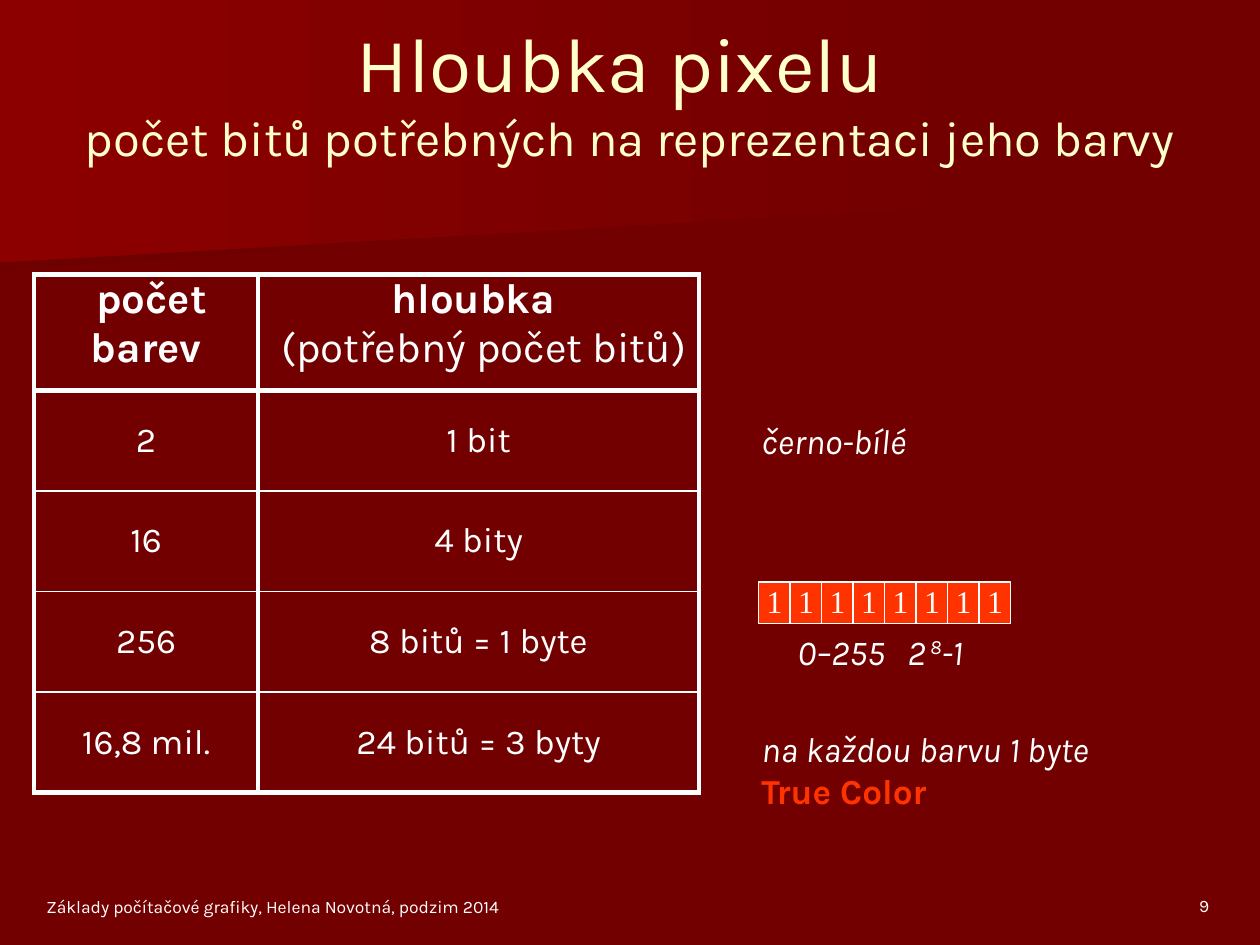
from pptx import Presentation
from pptx.dml.color import RGBColor
from pptx.enum.shapes import MSO_SHAPE as Preset
from pptx.enum.text import MSO_ANCHOR as Anchor, PP_ALIGN as Align
from pptx.oxml.ns import qn
from pptx.util import Pt
from lxml.etree import SubElement

COLORS = {"ground": "720000", "glow": "8C0000", "shade": "6F0000", "title": "FFFFCC",
          "white": "FFFFFF", "accent": "FF3300"}
WIDE = (7.2, 3.6, 7.2, 3.6)
NONE = (0, 0, 0, 0)
BODY = {"name": "Karla", "size": Pt(20)}
ITALIC = {**BODY, "italic": True}


class SlideBuilder:
    """Draws styled elements on one slide, with all lengths in points."""

    def __init__(self, slide, colors):
        self.slide, self.colors = slide, colors
        self.ground(slide.background.fill)

    def rgb(self, key):
        return RGBColor.from_string(self.colors[key])

    def ground(self, fill):
        fill.solid()
        fill.fore_color.rgb = self.rgb("ground")

    def add_runs(self, paragraph, runs, align):
        paragraph.alignment = align
        for text, style, color in runs:
            for number, line in enumerate(text.split("\n")):
                if number:
                    paragraph.add_line_break()
                if not line:
                    continue
                run = paragraph.add_run()
                run.text = line
                run.font.color.rgb = self.rgb(color)
                for key, value in style.items():
                    if key == "baseline":
                        run._r.get_or_add_rPr().set(key, value)
                    else:
                        setattr(run.font, key, value)

    def text(self, box, runs, align=Align.LEFT, anchor=Anchor.TOP, insets=WIDE):
        frame = self.slide.shapes.add_textbox(*map(Pt, box)).text_frame
        left, top, right, bottom = map(Pt, insets)
        layout = {"word_wrap": True, "vertical_anchor": anchor, "margin_left": left,
                  "margin_top": top, "margin_right": right, "margin_bottom": bottom}
        for key, value in layout.items():
            setattr(frame, key, value)
        self.add_runs(frame.paragraphs[0], runs, align)

    def rectangle(self, box, fill, line):
        rectangle = self.slide.shapes.add_shape(Preset.RECTANGLE, *map(Pt, box))
        rectangle.shadow.inherit = False
        rectangle.fill.solid()
        rectangle.fill.fore_color.rgb = self.rgb(fill)
        rectangle.line.color.rgb = self.rgb(line)
        rectangle.line.width = Pt(0.75)

    def band(self, points, start, end):
        corners = [(Pt(x), Pt(y)) for x, y in points]
        outline = self.slide.shapes.build_freeform(*corners[0], scale=1.0)
        outline.add_line_segments(corners[1:], close=True)
        band = outline.convert_to_shape()
        band.shadow.inherit = False
        band.line.fill.background()
        band.fill.gradient()
        band.fill.gradient_angle = 0
        for stop, color in zip(band.fill.gradient_stops, (start, end)):
            stop.color.rgb = self.rgb(color)

    def border(self, cell, side, width):
        line = SubElement(cell._tc.get_or_add_tcPr(), qn(f"a:ln{side}"), w=str(Pt(width)))
        SubElement(SubElement(line, qn("a:solidFill")), qn("a:srgbClr"),
                   val=self.colors["white"])

    def table(self, left, top, widths, heights, rows):
        box = map(Pt, (left, top, sum(widths), sum(heights)))
        table = self.slide.shapes.add_table(len(rows), len(widths), *box).table
        table.first_row = table.horz_banding = False
        for column, width in zip(table.columns, widths):
            column.width = Pt(width)
        last = len(rows) - 1
        for r, (height, contents) in enumerate(zip(heights, rows)):
            table.rows[r].height = Pt(height)
            for c, runs in enumerate(contents):
                cell = table.cell(r, c)
                for side in ("left", "top", "right", "bottom"):
                    setattr(cell, f"margin_{side}", 0)
                cell.vertical_anchor = Anchor.MIDDLE if r else Anchor.TOP
                thick = {"L": True, "R": True, "T": r <= 1, "B": r in (0, last)}
                for side, heavy in thick.items():
                    self.border(cell, side, 3 if heavy else 1)
                cell.fill.background()
                self.add_runs(cell.text_frame.paragraphs[0], runs, Align.CENTER)


def main():
    deck = Presentation()
    deck.slide_width, deck.slide_height = Pt(720), Pt(540)
    page = SlideBuilder(deck.slides.add_slide(deck.slide_layouts[6]), COLORS)

    page.band([(560, 110), (0, 156), (0, 73), (561, 73), (560, 92)], "shade", "ground")
    page.band([(570, 116.5), (0, 150), (0, 0), (570, 0)], "glow", "ground")

    small = {**BODY, "size": Pt(10)}
    page.text((19.5, 502.5, 454.5, 25),
              [("Základy počítačové grafiky, Helena Novotná, podzim 2014", small, "white")],
              anchor=Anchor.BOTTOM)
    page.text((530, 502.5, 168, 24.5), [("9", small, "white")], Align.RIGHT, Anchor.BOTTOM)
    page.text((19.5, 21.5, 680.5, 61),
              [("Hloubka pixelu \n", {**BODY, "size": Pt(44)}, "title"),
               ("počet bitů potřebných na reprezentaci jeho barvy",
                {**BODY, "size": Pt(28)}, "title")], Align.CENTER, Anchor.MIDDLE)

    byte_left, byte_top, bit_width, bits = 433.5, 332.5, 18, "11111111"
    byte_right = byte_left + bit_width * len(bits)
    bit_lefts = [byte_left + bit_width * i for i in range(len(bits))]
    for left in bit_lefts:
        page.rectangle((left, byte_top, min(30, byte_right - left), 24), "accent", "white")
    digit = {"name": "Times New Roman", "size": Pt(18)}
    for left, bit in zip(bit_lefts, bits):
        page.text((left, byte_top, bit_width, 21.5), [(bit, digit, "white")],
                  Align.CENTER, insets=NONE)

    notes_left = 428
    page.text((notes_left, 356.5, 150, 31),
              [("0–255   2", ITALIC, "white"),
               (" 8", {**ITALIC, "baseline": "30000"}, "white"),
               ("-1", ITALIC, "white")], Align.CENTER)
    page.text((notes_left, 412, 232.5, 55.5),
              [("na každou barvu 1 byte\n", ITALIC, "white"),
               ("True Color", {**BODY, "bold": True}, "accent")])
    page.text((notes_left, 236, 198, 31), [("černo-bílé", ITALIC, "white")])

    heading = {**BODY, "size": Pt(24)}
    strong = {**heading, "bold": True}
    header = [[(" počet barev", strong, "white")],
              [("hloubka \n ", strong, "white"),
               ("(potřebný počet bitů)", heading, "white")]]
    depths = [("2", "1 bit"), ("16", "4 bity"), ("256", "8 bitů = 1 byte"),
              ("16,8 mil.", "24 bitů = 3 byty")]
    body = [[[(value, BODY, "white")] for value in depth] for depth in depths]
    page.table(19.5, 157, (128, 252), [66] + [57.5] * len(depths), [header] + body)

    deck.save("out.pptx")


if __name__ == "__main__":
    main()
